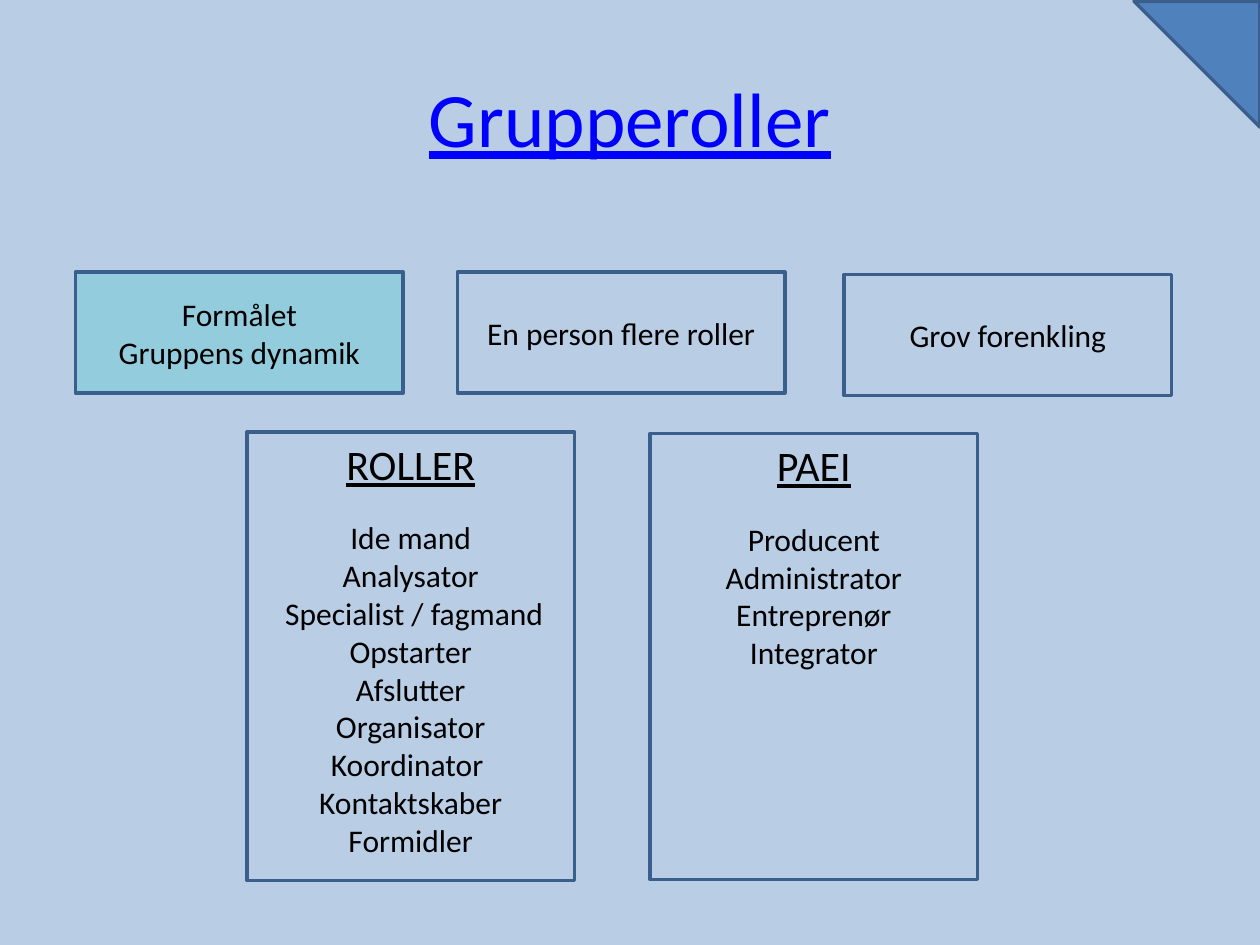
"""Build the slide on group roles."""
import dataclasses
import typing

import pptx
import pptx.dml.color
import pptx.enum.shapes
import pptx.enum.text
import pptx.util

Inches = pptx.util.Inches
Pt = pptx.util.Pt
SHAPE = pptx.enum.shapes.MSO_SHAPE
ANCHOR = pptx.enum.text.MSO_ANCHOR
ALIGN = pptx.enum.text.PP_ALIGN

COLORS = {
    "back": "B9CDE5",
    "aqua": "93CDDD",
    "blue": "4F81BD",
    "edge": "3A5F8C",
    "text": "000000",
    "link": "0000FF",
}
PLAIN = {"name": "Calibri", "size": Pt(18), "underline": False}
HEAD = PLAIN | {"size": Pt(24), "underline": True}
TITLE = HEAD | {"size": Pt(44)}
WIDE = 2.6


@dataclasses.dataclass
class Box:
    """A framed box of text lines, with or without a heading."""
    left: float
    top: float
    height: float
    lines: list[str]
    head: str = ""
    fill: str = "back"


BOXES = [
    Box(0.6, 2.16, 0.96, ["Formålet", "Gruppens dynamik"], fill="aqua"),
    Box(3.63, 2.16, 0.96, ["En person flere roller"]),
    Box(6.7, 2.18, 0.96, ["Grov forenkling"]),
    Box(1.96, 3.43, 3.56, [
        "Ide mand", "Analysator", " Specialist / fagmand", "Opstarter", "Afslutter",
        "Organisator", "Koordinator ", "Kontaktskaber", "Formidler",
    ], head="ROLLER"),
    Box(5.16, 3.44, 3.54, [
        "Producent", "Administrator", "Entreprenør", "Integrator",
    ], head="PAEI"),
]


def get_color(name: str) -> pptx.dml.color.RGBColor:
    """Return the named colour."""
    return pptx.dml.color.RGBColor.from_string(COLORS[name])


def set_all(item: typing.Any, values: dict[str, typing.Any]) -> None:
    """Set each named value on the item."""
    for name, value in values.items():
        setattr(item, name, value)


def write_line(para: typing.Any, text: str, style: dict, color: str = "text") -> None:
    """Write one centred line of text."""
    para.alignment = ALIGN.CENTER
    run = para.add_run()
    run.text = text
    set_all(run.font, style)
    run.font.color.rgb = get_color(color)


def draw_shape(slide: typing.Any, kind: typing.Any, place: tuple, fill: str) -> typing.Any:
    """Draw a filled shape with the common edge."""
    shape = slide.shapes.add_shape(kind, *map(Inches, place))
    shape.shadow.inherit = False
    shape.fill.solid()
    shape.fill.fore_color.rgb = get_color(fill)
    shape.line.color.rgb = get_color("edge")
    shape.line.width = Pt(2)
    return shape


def draw_box(slide: typing.Any, box: Box) -> None:
    """Draw one box and its text."""
    place = (box.left, box.top, WIDE, box.height)
    frame = draw_shape(slide, SHAPE.RECTANGLE, place, box.fill).text_frame
    anchor = ANCHOR.TOP if box.head else ANCHOR.MIDDLE
    set_all(frame, {"word_wrap": True, "vertical_anchor": anchor})
    para = frame.paragraphs[0]
    if box.head:
        write_line(para, box.head, HEAD)
        para.space_after = Pt(17)
        para = frame.add_paragraph()
    for rank, line in enumerate(box.lines):
        write_line(frame.add_paragraph() if rank else para, line, PLAIN)


def main() -> None:
    """Build and save the slide."""
    deck = pptx.Presentation()
    set_all(deck, {"slide_width": Inches(10), "slide_height": Inches(7.5)})
    slide = deck.slides.add_slide(deck.slide_layouts[5])
    slide.background.fill.solid()
    slide.background.fill.fore_color.rgb = get_color("back")

    title = slide.shapes.title
    set_all(title, {
        "left": Inches(0.5), "top": Inches(0.3),
        "width": Inches(9), "height": Inches(1.25),
    })
    title.text_frame.vertical_anchor = ANCHOR.MIDDLE
    write_line(title.text_frame.paragraphs[0], "Grupperoller", TITLE, "link")

    for box in BOXES:
        draw_box(slide, box)
    draw_shape(slide, SHAPE.RIGHT_TRIANGLE, (9, 0.01, 1, 1), "blue").rotation = 180
    deck.save("out.pptx")


if __name__ == "__main__":
    main()
